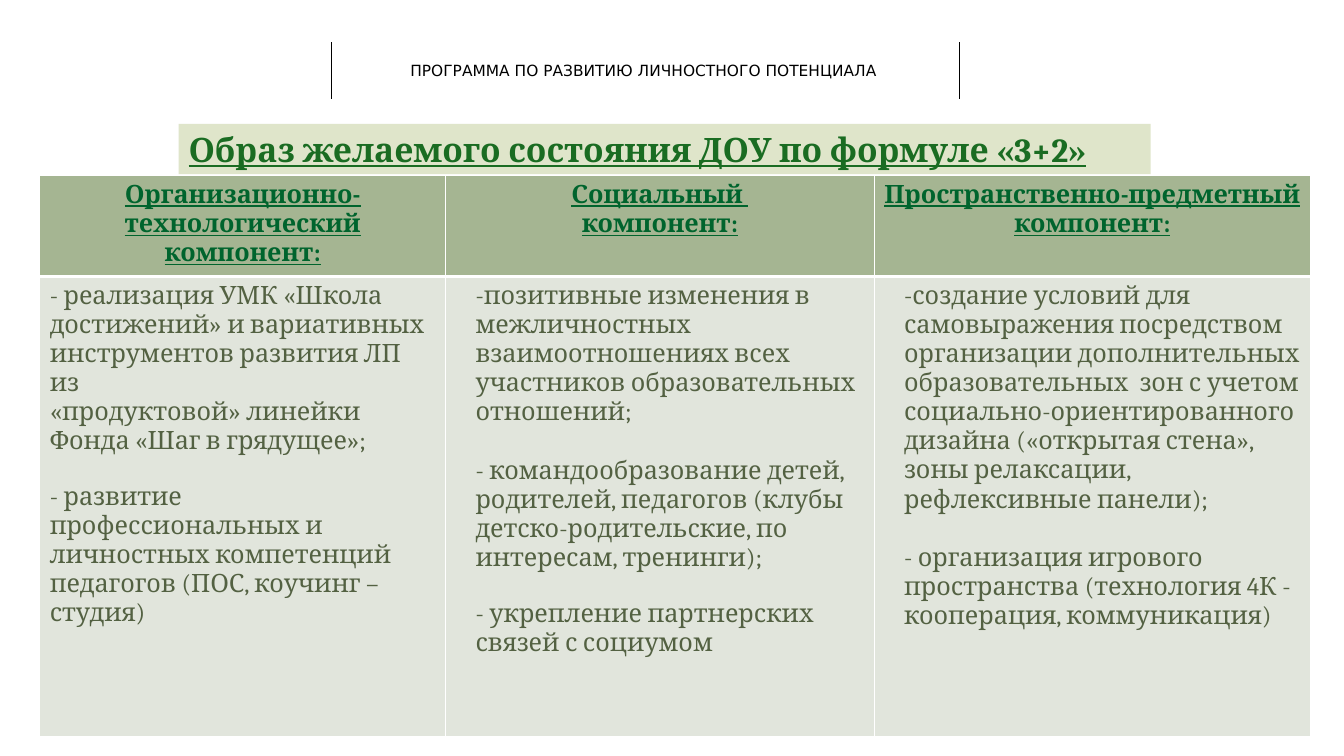
from lxml import etree
from pptx import Presentation
from pptx import util as u
from pptx.dml.color import RGBColor
from pptx.enum import shapes, text
from pptx.oxml.ns import qn

HEADING_FORMAT = {"size": u.Pt(18), "name": "Cambria", "bold": True, "underline": True}
BODY_FORMAT = {"size": u.Pt(18), "name": "Cambria", "bold": False, "underline": False}
TITLE_FORMAT = {**HEADING_FORMAT, "size": u.Pt(24)}
PROGRAM_FORMAT = {"size": u.Pt(11), "name": "DejaVu Sans"}

COLUMN_WIDTHS = (10.23, 10.8, 11)
ROW_HEIGHTS = (2.5, 11.6)
HEADINGS = (
    ("Организационно-технологический компонент:",),
    ("Социальный ", "компонент:"),
    ("Пространственно-предметный компонент:",),
)
# Each paragraph is (space before in points, wording)
GOALS = (
    (
        (0, "- реализация УМК «Школа"),
        (0, "достижений» и вариативных"),
        (0, "инструментов развития ЛП из"),
        (0, "«продуктовой» линейки Фонда «Шаг в грядущее»;"),
        (19, "- развитие профессиональных и личностных компетенций педагогов "
             "(ПОС, коучинг –студия)"),
    ),
    (
        (0, "позитивные изменения в межличностных взаимоотношениях всех "
            "участников образовательных отношений;"),
        (21, " командообразование детей, родителей, педагогов "
             "(клубы детско-родительские, по интересам, тренинги);"),
        (19, " укрепление партнерских связей с социумом"),
    ),
    (
        (0, "создание условий для  самовыражения посредством организации "
            "дополнительных образовательных  зон с учетом "
            "социально-ориентированного дизайна («открытая стена», "
            "зоны релаксации, рефлексивные панели);"),
        (21, " организация игрового пространства "
             "(технология 4К - кооперация, коммуникация)"),
    ),
)


def rgb(value):
    return RGBColor.from_string(value)


def fill_with(part, color):
    part.fill.solid()
    part.fill.fore_color.rgb = rgb(color)


def style(paragraph, formats, color, align=text.PP_ALIGN.LEFT):
    paragraph.alignment = align
    for run in paragraph.runs:
        for name, value in formats.items():
            setattr(run.font, name, value)
        run.font.color.rgb = rgb(color)


def add_dash(paragraph):
    properties = paragraph._p.get_or_add_pPr()
    properties.set("marL", str(u.Cm(0.5)))
    properties.set("indent", "0")
    etree.SubElement(properties, qn("a:buFont")).set("typeface", "Cambria")
    etree.SubElement(properties, qn("a:buChar")).set("char", "-")


def add_borders(cell, widths):
    """Draw white borders; widths in points go left, right, top, bottom."""
    properties = cell._tc.get_or_add_tcPr()
    for index, (side, width) in enumerate(zip("LRTB", widths)):
        border = etree.Element(qn(f"a:ln{side}"), w=str(u.Pt(width)))
        solid = etree.SubElement(border, qn("a:solidFill"))
        etree.SubElement(solid, qn("a:srgbClr")).set("val", "FFFFFF")
        properties.insert(index, border)


def paragraphs_for(frame, count):
    for _ in range(count - 1):
        frame.add_paragraph()
    return frame.paragraphs


def add_program_band(slide, left, top, width, height):
    for x in (left, left + width):
        divider = slide.shapes.add_connector(
            shapes.MSO_CONNECTOR.STRAIGHT, u.Cm(x), u.Cm(top), u.Cm(x), u.Cm(top + height))
        divider.line.color.rgb = rgb("000000")
        divider.line.width = u.Pt(0.75)
        etree.SubElement(divider._element.spPr, qn("a:effectLst"))
    program = slide.shapes.add_textbox(
        u.Cm(left + 1.73), u.Cm(top + 0.35), u.Cm(width - 3.45), u.Cm(height - 0.7))
    frame = program.text_frame
    frame.word_wrap = True
    frame.text = "ПРОГРАММА ПО РАЗВИТИЮ ЛИЧНОСТНОГО ПОТЕНЦИАЛА"
    style(frame.paragraphs[0], PROGRAM_FORMAT, "000000")


def place_title(slide, left, top, width, height):
    title = slide.shapes.title
    title.left, title.top, title.width, title.height = map(u.Cm, (left, top, width, height))
    fill_with(title, "DFE5CA")
    frame = title.text_frame
    frame.text = "Образ желаемого состояния ДОУ по формуле «3+2»"
    frame.auto_size = text.MSO_AUTO_SIZE.NONE
    frame.vertical_anchor = text.MSO_ANCHOR.TOP
    style(frame.paragraphs[0], TITLE_FORMAT, "1A6C22")


def fill_heading(cell, lines):
    fill_with(cell, "A5B592")
    add_borders(cell, (1, 1, 1, 3))
    for paragraph, line in zip(paragraphs_for(cell.text_frame, len(lines)), lines):
        paragraph.add_run().text = line
        style(paragraph, HEADING_FORMAT, "00642D", text.PP_ALIGN.CENTER)


def fill_goals(cell, goals, dashed):
    fill_with(cell, "E1E5DC")
    add_borders(cell, (1, 1, 3, 1))
    for paragraph, (gap, goal) in zip(paragraphs_for(cell.text_frame, len(goals)), goals):
        if gap:
            paragraph.space_before = u.Pt(gap)
        if dashed:
            add_dash(paragraph)
        paragraph.add_run().text = goal
        style(paragraph, BODY_FORMAT, "536142")


def add_components(slide, left, top):
    table = slide.shapes.add_table(
        len(ROW_HEIGHTS), len(COLUMN_WIDTHS), u.Cm(left), u.Cm(top),
        u.Cm(sum(COLUMN_WIDTHS)), u.Cm(sum(ROW_HEIGHTS))).table
    table.first_row = table.horz_banding = False
    for row, height in zip(table.rows, ROW_HEIGHTS):
        row.height = u.Cm(height)
    for index, width in enumerate(COLUMN_WIDTHS):
        table.columns[index].width = u.Cm(width)
        fill_heading(table.cell(0, index), HEADINGS[index])
        fill_goals(table.cell(1, index), GOALS[index], dashed=index > 0)


def main():
    deck = Presentation()
    deck.slide_width, deck.slide_height = u.Cm(33.87), u.Cm(19.05)
    slide = deck.slides.add_slide(deck.slide_layouts.get_by_name("Title Only"))
    add_program_band(slide, 8.36, 1.07, 15.82, 1.42)
    place_title(slide, 4.5, 3.12, 24.5, 1.27)
    add_components(slide, 1, 4.43)
    deck.save("out.pptx")


if __name__ == "__main__":
    main()
